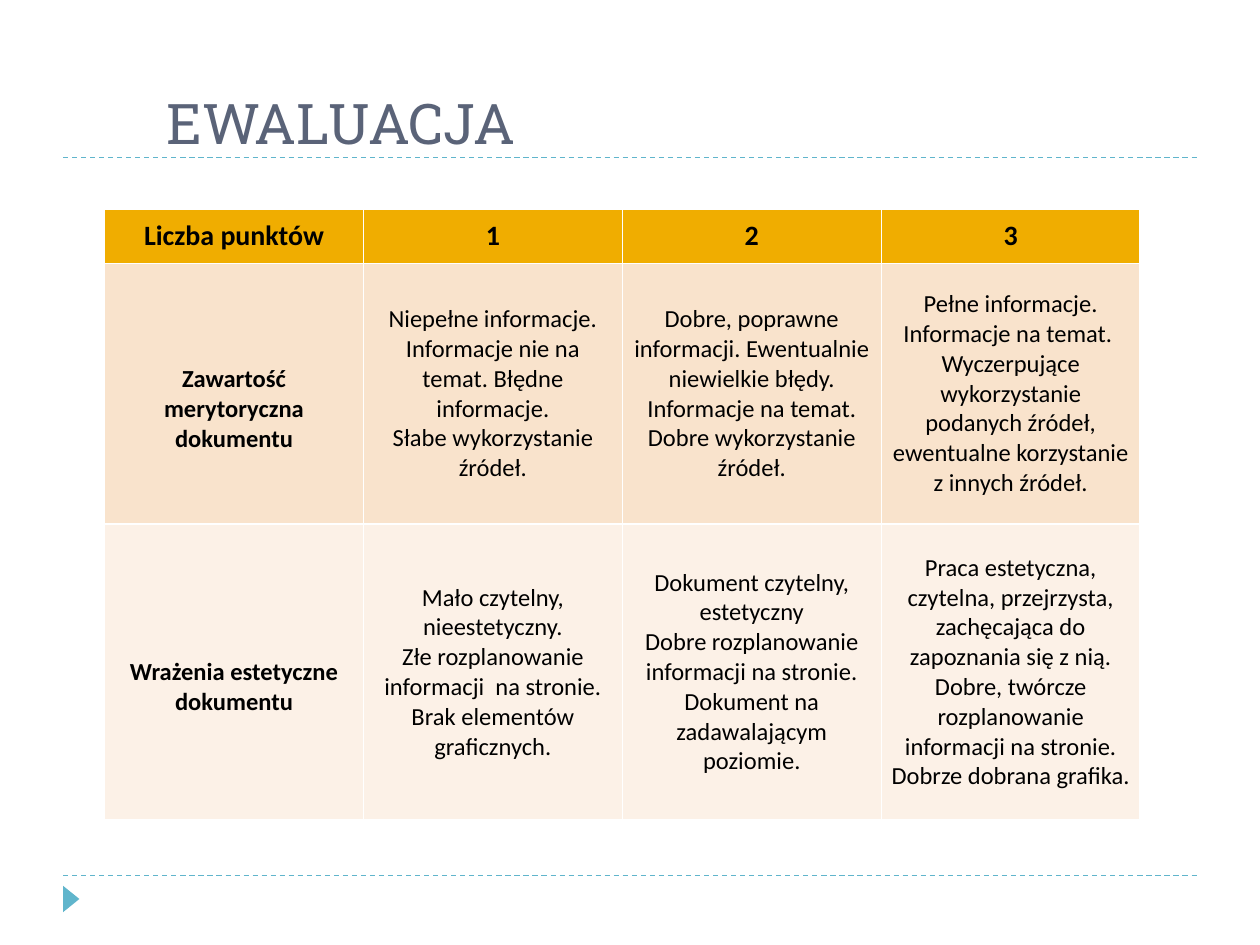
import pptx
import pptx.dml.color
import pptx.enum.dml
import pptx.enum.shapes
import pptx.enum.text
import pptx.oxml.ns
import pptx.util
from lxml import etree

Inches = pptx.util.Inches
Pt = pptx.util.Pt
COLORS = {
    "accent": "60B5CC",
    "title": "5A6378",
    "text": "000000",
    "header": "F0AD00",
    "content": "F9E3CC",
    "aesthetics": "FCF1E7",
}


def rgb(name):
    return pptx.dml.color.RGBColor.from_string(COLORS[name])


def add_text(paragraph, text, font, size, color, bold=False):
    run = paragraph.add_run()
    run.text = text
    run.font.name = font
    run.font.size = Pt(size)
    run.font.bold = bold
    run.font.color.rgb = rgb(color)


presentation = pptx.Presentation()
presentation.slide_width = Inches(10)
presentation.slide_height = Inches(7.5)
slide = presentation.slides.add_slide(presentation.slide_layouts[5])

for y in (6.95, 1.25):
    rule = slide.shapes.add_connector(
        pptx.enum.shapes.MSO_CONNECTOR.STRAIGHT,
        Inches(0.5), Inches(y), Inches(9.5), Inches(y))
    rule.line.color.rgb = rgb("accent")
    rule.line.width = Pt(0.75)
    rule.line.dash_style = pptx.enum.dml.MSO_LINE.DASH
    etree.SubElement(rule._element.spPr, pptx.oxml.ns.qn("a:effectLst"))

marker = slide.shapes.add_shape(
    pptx.enum.shapes.MSO_SHAPE.ISOSCELES_TRIANGLE,
    Inches(0.46), Inches(7.07), Inches(0.21), Inches(0.13))
marker.rotation = 90
marker.shadow.inherit = False
marker.fill.solid()
marker.fill.fore_color.rgb = rgb("accent")
marker.line.fill.background()

title = slide.shapes.title
title.left, title.top = Inches(1.22), Inches(0.22)
title.width, title.height = Inches(8.22), Inches(1.07)
title.text_frame.auto_size = pptx.enum.text.MSO_AUTO_SIZE.NONE
title.text_frame.vertical_anchor = pptx.enum.text.MSO_ANCHOR.BOTTOM
title_paragraph = title.text_frame.paragraphs[0]
title_paragraph.alignment = pptx.enum.text.PP_ALIGN.LEFT
add_text(title_paragraph, "EWALUACJA", "Roboto Slab", 32, "title")

rubric = [
    ("header", 0.43, [["Liczba punktów"], ["1"], ["2"], ["3"]]),
    ("content", 2.07, [
        ["Zawartość merytoryczna dokumentu"],
        ["Niepełne informacje.",
         "Informacje nie na temat. Błędne informacje.",
         "Słabe wykorzystanie",
         "źródeł."],
        ["Dobre, poprawne informacji. Ewentualnie niewielkie błędy.",
         "Informacje na temat. Dobre wykorzystanie źródeł."],
        ["Pełne informacje.",
         "Informacje na temat. ",
         "Wyczerpujące wykorzystanie podanych źródeł, "
         "ewentualne korzystanie z innych źródeł."],
    ]),
    ("aesthetics", 2.35, [
        ["Wrażenia estetyczne dokumentu"],
        ["Mało czytelny, nieestetyczny.",
         "Złe rozplanowanie informacji  na stronie.",
         "Brak elementów graficznych."],
        ["Dokument czytelny, estetyczny",
         "Dobre rozplanowanie informacji na stronie.",
         "Dokument na zadawalającym poziomie."],
        ["Praca estetyczna, czytelna, przejrzysta, "
         "zachęcająca do zapoznania się z nią.",
         "Dobre, twórcze rozplanowanie informacji na stronie. "
         "Dobrze dobrana grafika."],
    ]),
]

table = slide.shapes.add_table(
    len(rubric), 4, Inches(0.83), Inches(1.66), Inches(8.22), Inches(4.85)).table

for row_index, (fill_name, height, row_cells) in enumerate(rubric):
    table.rows[row_index].height = Inches(height)
    is_header = row_index == 0
    for column_index, lines in enumerate(row_cells):
        is_label = column_index == 0
        cell = table.cell(row_index, column_index)
        cell.fill.solid()
        cell.fill.fore_color.rgb = rgb(fill_name)
        cell.vertical_anchor = pptx.enum.text.MSO_ANCHOR.MIDDLE
        cell.margin_left = cell.margin_right = Inches(0.07)
        cell.margin_bottom = Inches(0.05)
        cell.margin_top = Inches(0.29 if is_label and not is_header else 0.05)
        for line_index, line in enumerate(lines):
            frame = cell.text_frame
            paragraph = frame.add_paragraph() if line_index else frame.paragraphs[0]
            paragraph.alignment = pptx.enum.text.PP_ALIGN.CENTER
            add_text(paragraph, line, "Calibri", 16 if is_header else 14,
                     "text", is_header or is_label)

presentation.save("out.pptx")
